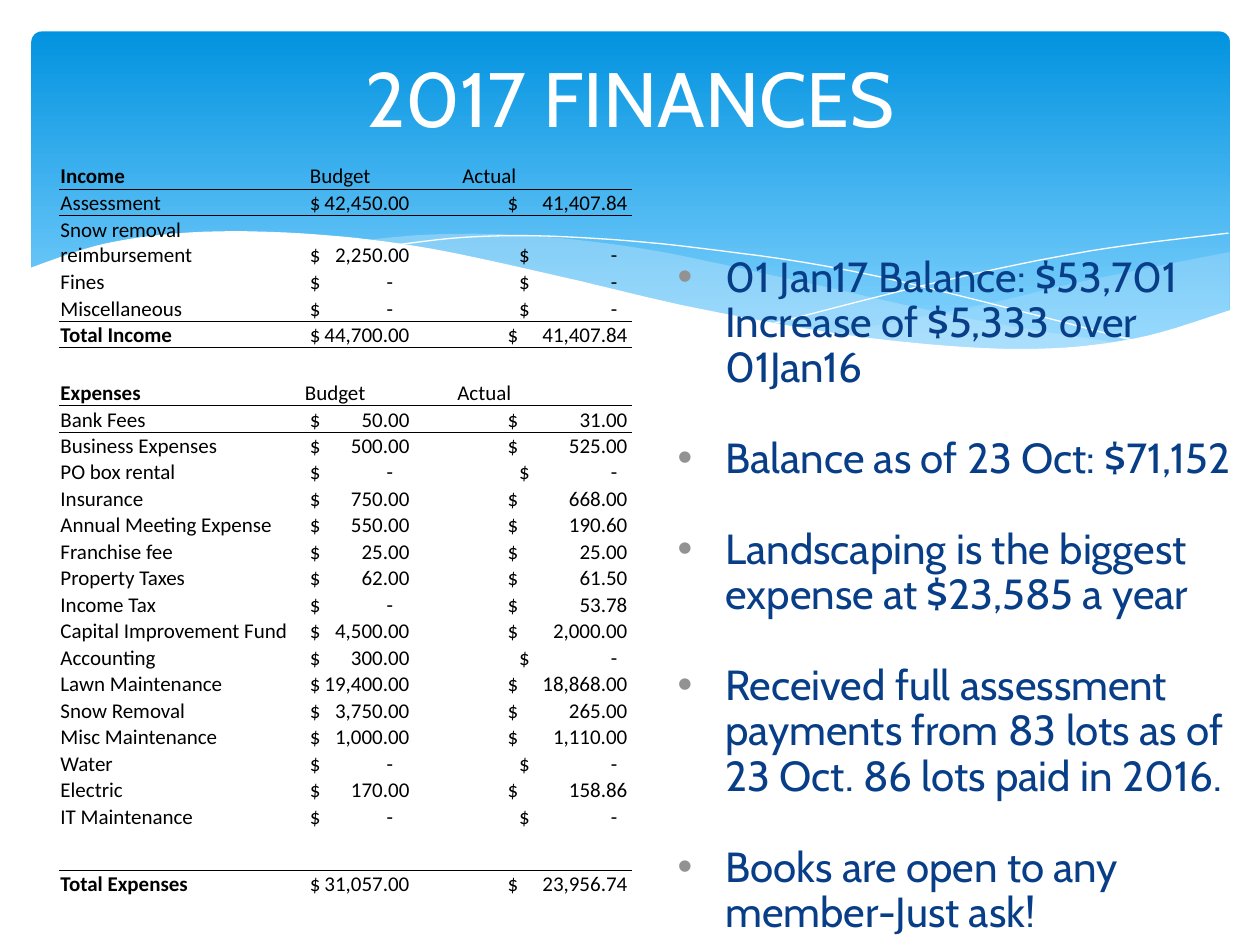
from typing import NamedTuple

import pptx
import pptx.dml.color
import pptx.enum.shapes
import pptx.enum.text
import pptx.oxml
import pptx.oxml.ns
import pptx.util
from pptx.util import Inches, Pt

COLORS = {"sky_top": "0293E0", "sky_bottom": "83D3FE", "mist": "C6E7FC", "white": "FFFFFF",
          "navy": "073E87", "bullet": "929292", "ink": "000000"}
NS = pptx.oxml.ns.nsdecls("a")
NO_TABLE_STYLE = "{2D5ABB26-0587-4C30-8999-92F81FD0307C}"
ALIGN = pptx.enum.text.PP_ALIGN
ANCHOR = pptx.enum.text.MSO_ANCHOR
CURVE_STEPS = 8


class Wave(NamedTuple):
    curves: list  # smooth edges through knots, in hundredths of an inch
    fill: str = ""
    alpha: int = 100


class Row(NamedTuple):
    label: str = ""
    budget: str = ""
    actual: str = ""
    height: float = 0.21
    bold: bool = False
    ruled: bool = False  # line below the row
    header_inset: float = 0.0


WAVES = [
    Wave([[(976, 200), (861, 223), (779, 242), (661, 265)],
          [(661, 265), (745, 275), (814, 278), (889, 272), (976, 247)]], "mist", 29),
    Wave([[(893, 273), (775, 254), (629, 222), (514, 198), (420, 187), (344, 186), (286, 191)],
          [(286, 191), (383, 207), (491, 232), (634, 261), (748, 276), (828, 278), (893, 273)]],
         "mist", 40),
    Wave([[(309, 195), (374, 188), (450, 188), (556, 197), (695, 219), (907, 272)]]),
    Wave([[(613, 257), (748, 223), (866, 199), (975, 185)]]),
    Wave([[(977, 246), (899, 269), (809, 277), (688, 268), (555, 245), (447, 220), (340, 197),
           (250, 186), (161, 184), (85, 193), (23, 213)],
          [(23, 329), (977, 329)]], "white"),
]

ROWS = [
    Row("Income", "Budget", "Actual", bold=True, ruled=True, header_inset=0.05),
    Row("Assessment", "42,450.00", "41,407.84"),
    Row("Snow removal reimbursement", "2,250.00", "-", height=0.42),
    Row("Fines", "-", "-"),
    Row("Miscellaneous", "-", "-", ruled=True),
    Row("Total Income", "44,700.00", "41,407.84", bold=True),
    Row(height=0.25),
    Row("Expenses", "Budget", "Actual", bold=True, ruled=True, header_inset=0.01),
    Row("Bank Fees", "50.00", "31.00"),
    Row("Business Expenses", "500.00", "525.00"),
    Row("PO box rental", "-", "-"),
    Row("Insurance", "750.00", "668.00"),
    Row("Annual Meeting Expense", "550.00", "190.60"),
    Row("Franchise fee", "25.00", "25.00"),
    Row("Property Taxes", "62.00", "61.50"),
    Row("Income Tax", "-", "53.78"),
    Row("Capital Improvement Fund", "4,500.00", "2,000.00"),
    Row("Accounting", "300.00", "-"),
    Row("Lawn Maintenance", "19,400.00", "18,868.00"),
    Row("Snow Removal", "3,750.00", "265.00"),
    Row("Misc Maintenance", "1,000.00", "1,110.00"),
    Row("Water", "-", "-"),
    Row("Electric", "170.00", "158.86"),
    Row("IT Maintenance", "-", "-"),
    Row(height=0.32, ruled=True),
    Row("Total Expenses", "31,057.00", "23,956.74", bold=True),
]

NOTES = [
    "01 Jan17 Balance: $53,701 Increase of $5,333 over 01Jan16",
    "Balance as of 23 Oct: $71,152",
    "Landscaping is the biggest expense at $23,585 a year",
    "Received full assessment payments from 83 lots as of 23 Oct. 86 lots paid in 2016.",
    "Books are open to any member-Just ask!",
]


def rgb(name: str) -> pptx.dml.color.RGBColor:
    return pptx.dml.color.RGBColor.from_string(COLORS[name])


def style(p, font: str, size: float, color: str, bold: bool = False) -> None:
    for r in p.runs:
        r.font.name, r.font.size, r.font.bold = font, Pt(size), bold
        r.font.color.rgb = rgb(color)


def smooth_curve(knots: list) -> list:
    """Points of a Catmull-Rom spline through the knots."""
    ends = [knots[0], *knots, knots[-1]]
    points = [knots[0]]
    for a, b, c, d in zip(ends, ends[1:], ends[2:], ends[3:]):
        for step in range(1, CURVE_STEPS + 1):
            t = step / CURVE_STEPS
            points.append(tuple(
                q + t / 2 * (r - p + t * (2 * p - 5 * q + 4 * r - s + t * (3 * (q - r) + s - p)))
                for p, q, r, s in zip(a, b, c, d)))
    return points


def draw_sky(slide) -> None:
    sp = slide.shapes.add_shape(pptx.enum.shapes.MSO_SHAPE.ROUNDED_RECTANGLE,
                                Inches(0.25), Inches(0.25), Inches(9.51), Inches(2.7))
    sp.adjustments[0] = 0.03
    sp.shadow.inherit = False
    sp.line.fill.background()
    sp.fill.gradient()
    sp.fill.gradient_angle = 270
    for stop, position, name in zip(sp.fill.gradient_stops, (0, 0.9), ("sky_top", "sky_bottom")):
        stop.position, stop.color.rgb = position, rgb(name)


def draw_wave(slide, wave: Wave) -> None:
    # Tenfold finer units keep the sampled curve smooth
    points = [(round(x * 10), round(y * 10))
              for curve in wave.curves for x, y in smooth_curve(curve)]
    builder = slide.shapes.build_freeform(*points[0], scale=Inches(1) / 1000)
    builder.add_line_segments(points[1:], close=bool(wave.fill))
    sp = builder.convert_to_shape()
    sp.shadow.inherit = False
    if not wave.fill:
        sp.fill.background()
        sp.line.color.rgb, sp.line.width = rgb("white"), Pt(0)
        return
    sp.line.fill.background()
    sp.fill.solid()
    sp.fill.fore_color.rgb = rgb(wave.fill)
    if wave.alpha < 100:
        color = sp._element.spPr.find(".//" + pptx.oxml.ns.qn("a:srgbClr"))
        color.append(pptx.oxml.parse_xml(f'<a:alpha {NS} val="{wave.alpha * 1000}"/>'))


def draw_title(slide) -> None:
    tf = slide.shapes.add_textbox(Inches(0.5), Inches(0.08), Inches(9), Inches(1.37)).text_frame
    tf.word_wrap, tf.vertical_anchor = True, ANCHOR.MIDDLE
    tf.text = "2017 FINANCES"
    tf.paragraphs[0].alignment = ALIGN.CENTER
    style(tf.paragraphs[0], "Cabin", 44, "white")


def draw_notes(slide) -> None:
    tf = slide.shapes.add_textbox(Inches(5.28), Inches(1.58), Inches(4.7), Inches(5.02)).text_frame
    tf.word_wrap, tf.margin_top = True, Inches(0.45)
    tf.text = "\n".join(NOTES)
    for i, p in enumerate(tf.paragraphs):
        p.line_spacing, p.space_before = 0.9, Pt(26 if i else 0)
        style(p, "Cabin", 24, "navy")
        pPr = p._p.get_or_add_pPr()
        pPr.set("marL", str(Inches(0.38)))
        pPr.set("indent", str(-Inches(0.38)))
        for bullet_part in (
                f'<a:buClr {NS}><a:srgbClr val="{COLORS["bullet"]}"/></a:buClr>',
                f'<a:buFont {NS} typeface="Arial"/>',
                f'<a:buChar {NS} char="•"/>'):
            pPr.append(pptx.oxml.parse_xml(bullet_part))


def fill_cell(cell, row: Row, col: int, rule_above: bool) -> None:
    text = row[col]
    left, tab = 0.01, 0.0
    if col and row.header_inset:
        left = row.header_inset
    elif col and text:
        # Dollar sign at the left, amount against a right tab stop
        dash = text == "-"
        left, tab = ((0.05, 0.66 if dash else 0.79) if col == 1
                     else (0.5, 0.78) if dash else (0.41, 0.95))
        text = "$\t" + text
    cell.margin_left, cell.margin_right = Inches(left), Inches(0.01)
    cell.margin_top, cell.margin_bottom = Inches(0.01), 0
    cell.vertical_anchor = ANCHOR.BOTTOM
    cell.fill.background()
    p = cell.text_frame.paragraphs[0]
    if text:
        p.text = text
        style(p, "Calibri", 12, "ink", row.bold and col == 0)
    else:
        p._p.append(pptx.oxml.parse_xml(f'<a:endParaRPr {NS} sz="1200"/>'))
    if tab:
        p._p.get_or_add_pPr().append(pptx.oxml.parse_xml(
            f'<a:tabLst {NS}><a:tab pos="{Inches(tab)}" algn="r"/></a:tabLst>'))
    for tag, shown in (("lnB", row.ruled), ("lnT", rule_above)):
        if shown:
            cell._tc.get_or_add_tcPr().insert(0, pptx.oxml.parse_xml(
                f'<a:{tag} {NS} w="{Pt(0.5)}"><a:solidFill>'
                f'<a:srgbClr val="{COLORS["ink"]}"/></a:solidFill></a:{tag}>'))


def draw_budget(slide) -> None:
    table = slide.shapes.add_table(len(ROWS), 3, Inches(0.47), Inches(1.29),
                                   Inches(4.55), Inches(5.8)).table
    table.first_row = table.horz_banding = False
    table._tbl.tblPr.find(pptx.oxml.ns.qn("a:tableStyleId")).text = NO_TABLE_STYLE
    for column, width in zip(table.columns, (1.94, 1.21, 1.4)):
        column.width = Inches(width)
    for i, row in enumerate(ROWS):
        table.rows[i].height = Inches(row.height)
        for col in range(3):
            fill_cell(table.cell(i, col), row, col, i > 0 and ROWS[i - 1].ruled)


def main() -> None:
    prs = pptx.Presentation()
    prs.slide_width, prs.slide_height = Inches(10), Inches(7.5)
    slide = prs.slides.add_slide(prs.slide_layouts[6])
    # Backdrop
    draw_sky(slide)
    for wave in WAVES:
        draw_wave(slide, wave)
    # Content
    draw_title(slide)
    draw_notes(slide)
    draw_budget(slide)
    prs.save("out.pptx")


if __name__ == "__main__":
    main()
